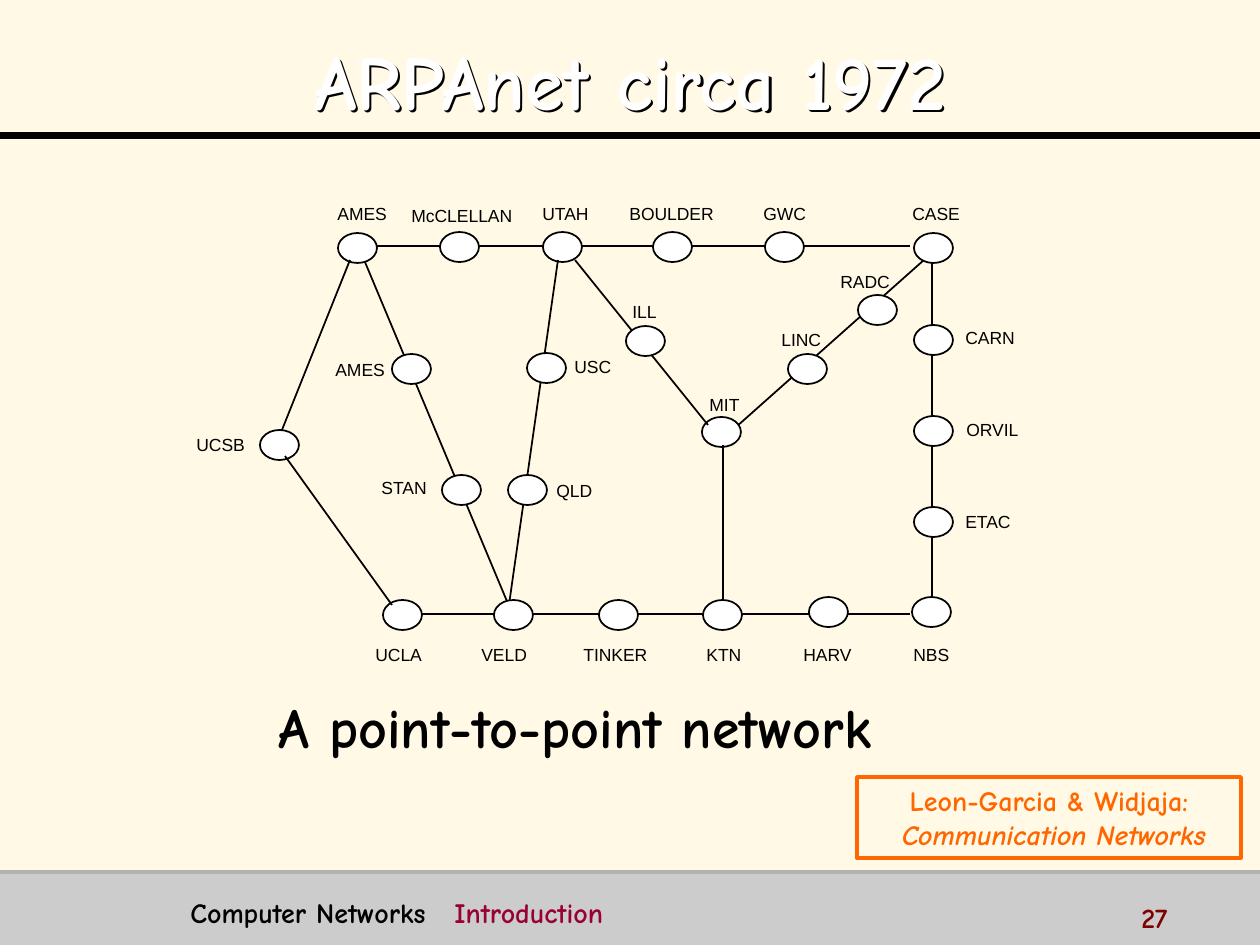
from lxml import etree
from pptx import Presentation
from pptx.dml.color import RGBColor
from pptx.enum.shapes import MSO_CONNECTOR, MSO_SHAPE
from pptx.enum.text import MSO_ANCHOR, MSO_AUTO_SIZE, PP_ALIGN
from pptx.oxml.ns import qn
from pptx.util import Emu, Pt

STRAIGHT = MSO_CONNECTOR.STRAIGHT
RECTANGLE = MSO_SHAPE.RECTANGLE
OVAL = MSO_SHAPE.OVAL
TOP = MSO_ANCHOR.TOP
MIDDLE = MSO_ANCHOR.MIDDLE
LEFT = PP_ALIGN.LEFT
CENTER = PP_ALIGN.CENTER
GROW = MSO_AUTO_SIZE.SHAPE_TO_FIT_TEXT
FIXED = MSO_AUTO_SIZE.NONE

PX_PER_INCH = 126
HEADING_FONT = "Comic Neue"
LABEL_FONT = "Arial"
BLACK, WHITE, ORANGE = "000000", "FFFFFF", "FF6600"
NODE_WIDTH, NODE_HEIGHT = 39, 30
LABEL_WIDTH, LABEL_HEIGHT = 96, 34
TOP_LABELS, BOTTOM_LABELS = 197, 638

BACK_LINKS = [
    (924, 260, 735, 428),
    (932, 262, 932, 602),
    (420, 614, 910, 614),
    (377, 246, 910, 246),
]
BACK_NODES = [
    ("UCSB", 260, 430, 184, 428),
    ("UCLA", 383, 600, 363, BOTTOM_LABELS),
    ("TINKER", 599, 600, 571, BOTTOM_LABELS),
    ("KTN", 703, 600, 694, BOTTOM_LABELS),
    ("HARV", 809, 597, 791, BOTTOM_LABELS),
    ("NBS", 912, 597, 901, BOTTOM_LABELS),
    ("ETAC", 914, 507, 953, 505),
    ("ORVIL", 914, 416, 954, 413),
    ("CARN", 914, 325, 953, 321),
    ("CASE", 914, 233, 900, TOP_LABELS),
    ("GWC", 765, 232, 751, TOP_LABELS),
    ("BOULDER", 653, 232, 617, TOP_LABELS),
    ("UTAH", 543, 232, 530, TOP_LABELS),
    ("AMES", 338, 233, 325, TOP_LABELS),
    ("McCLELLAN", 440, 232, 399, 199),
    ("MIT", 702, 417, 697, 388),
    ("LINC", 788, 354, 769, 323),
    ("RADC", 858, 295, 828, 265),
]
FRONT_LINKS = [
    (285, 456, 392, 605),
    (350, 260, 282, 430),
    (575, 260, 708, 425),
    (723, 445, 723, 600),
    (558, 260, 509, 605),
    (365, 262, 509, 606),
]
FRONT_NODES = [
    ("ILL", 626, 326, 620, 295),
    ("VELD", 494, 600, 469, BOTTOM_LABELS),
    ("QLD", 508, 475, 544, 474),
    ("USC", 527, 353, 562, 350),
    ("STAN", 442, 475, 369, 471),
    ("AMES", 392, 354, 323, 353),
]
LABEL_WIDTHS = {"UCLA": 73, "VELD": 86, "BOULDER": 117, "McCLELLAN": 134}


def px(length):
    return Emu(round(length * 914400 / PX_PER_INCH))


def color(value):
    return RGBColor.from_string(value)


def add_span(para, text, font=HEADING_FONT, size=16, ink=BLACK,
             bold=True, italic=False):
    span = para.add_run()
    span.text = text
    span.font.name = font
    span.font.size = Pt(size)
    span.font.bold = bold
    span.font.italic = italic
    span.font.color.rgb = color(ink)
    return span


class Page:
    def __init__(self, deck, background):
        self.slide = deck.slides.add_slide(deck.slide_layouts[6])
        self.slide.background.fill.solid()
        self.slide.background.fill.fore_color.rgb = color(background)

    def line(self, x1, y1, x2, y2, ink=BLACK, width=1):
        link = self.slide.shapes.add_connector(STRAIGHT, px(x1), px(y1), px(x2), px(y2))
        link.line.color.rgb = color(ink)
        link.line.width = Pt(width)
        etree.SubElement(link._element.spPr, qn("a:effectLst"))

    def shape(self, kind, left, top, width, height, fill=None, ink=None, weight=1):
        shape = self.slide.shapes.add_shape(kind, px(left), px(top), px(width), px(height))
        shape.shadow.inherit = False
        if fill:
            shape.fill.solid()
            shape.fill.fore_color.rgb = color(fill)
        else:
            shape.fill.background()
        if ink:
            shape.line.color.rgb = color(ink)
            shape.line.width = Pt(weight)
        else:
            shape.line.fill.background()
        return shape

    def text(self, left, top, width, height, text, anchor=TOP, align=LEFT,
             inset=6, spacing=None, grow=False, shadow=False, **style):
        box = self.slide.shapes.add_textbox(px(left), px(top), px(width), px(height))
        frame = box.text_frame
        frame.word_wrap = True
        frame.auto_size = GROW if grow else FIXED
        frame.vertical_anchor = anchor
        frame.margin_top = px(inset)
        if shadow:
            effects = etree.SubElement(box._element.spPr, qn("a:effectLst"))
            cast = etree.SubElement(effects, qn("a:outerShdw"), blurRad="0",
                                    dist=str(px(3)), dir="2700000",
                                    algn="tl", rotWithShape="0")
            etree.SubElement(cast, qn("a:srgbClr"), val=BLACK)
        para = frame.paragraphs[0]
        para.alignment = align
        if spacing:
            para.line_spacing = spacing
        add_span(para, text, **style)
        return para

    def network(self, links, nodes):
        for link in links:
            self.line(*link)
        for name, left, top, label_left, label_top in nodes:
            self.shape(OVAL, left, top, NODE_WIDTH, NODE_HEIGHT, WHITE, BLACK)
            self.text(label_left, label_top, LABEL_WIDTHS.get(name, LABEL_WIDTH),
                      LABEL_HEIGHT, name, grow=True, font=LABEL_FONT, size=10, bold=False)

    def footer(self, course, chapter, number):
        para = self.text(178, 890, 917, 39, course)
        tabs = etree.SubElement(para._p.get_or_add_pPr(), qn("a:tabLst"))
        etree.SubElement(tabs, qn("a:tab"), pos=str(px(264)), algn="l")
        add_span(para, "\t" + chapter, ink="990033")
        self.text(1129, 893, 126, 32, number, inset=8, ink="800000")

    def citation(self, authors, title):
        box = self.shape(RECTANGLE, 857, 777, 384, 81, ink=ORANGE, weight=2)
        frame = box.text_frame
        frame.word_wrap = True
        frame.vertical_anchor = MIDDLE
        first, second = frame.paragraphs[0], frame.add_paragraph()
        first.alignment = second.alignment = CENTER
        add_span(first, authors, ink=ORANGE)
        add_span(second, " " + title, ink=ORANGE, italic=True)


def main():
    deck = Presentation()
    deck.slide_width, deck.slide_height = px(1260), px(945)
    page = Page(deck, "FFF9E6")
    page.shape(RECTANGLE, 0, 872, 1260, 73, "CCCCCC")
    page.line(0, 136, 1260, 136, width=4)
    page.line(0, 872, 1260, 872, "B2B2B2", 2)
    page.text(25, 16, 1211, 110, "ARPAnet circa 1972", anchor=MIDDLE, align=CENTER,
              inset=14, spacing=1.1, shadow=True, size=44, ink=WHITE)
    page.text(266, 685, 753, 72, "A point-to-point network", inset=7, size=32)
    page.footer("Computer Networks", "Introduction", "27")
    page.network(BACK_LINKS, BACK_NODES)
    page.network(FRONT_LINKS, FRONT_NODES)
    page.citation("Leon-Garcia & Widjaja:", "Communication Networks")
    deck.save("out.pptx")


if __name__ == "__main__":
    main()
